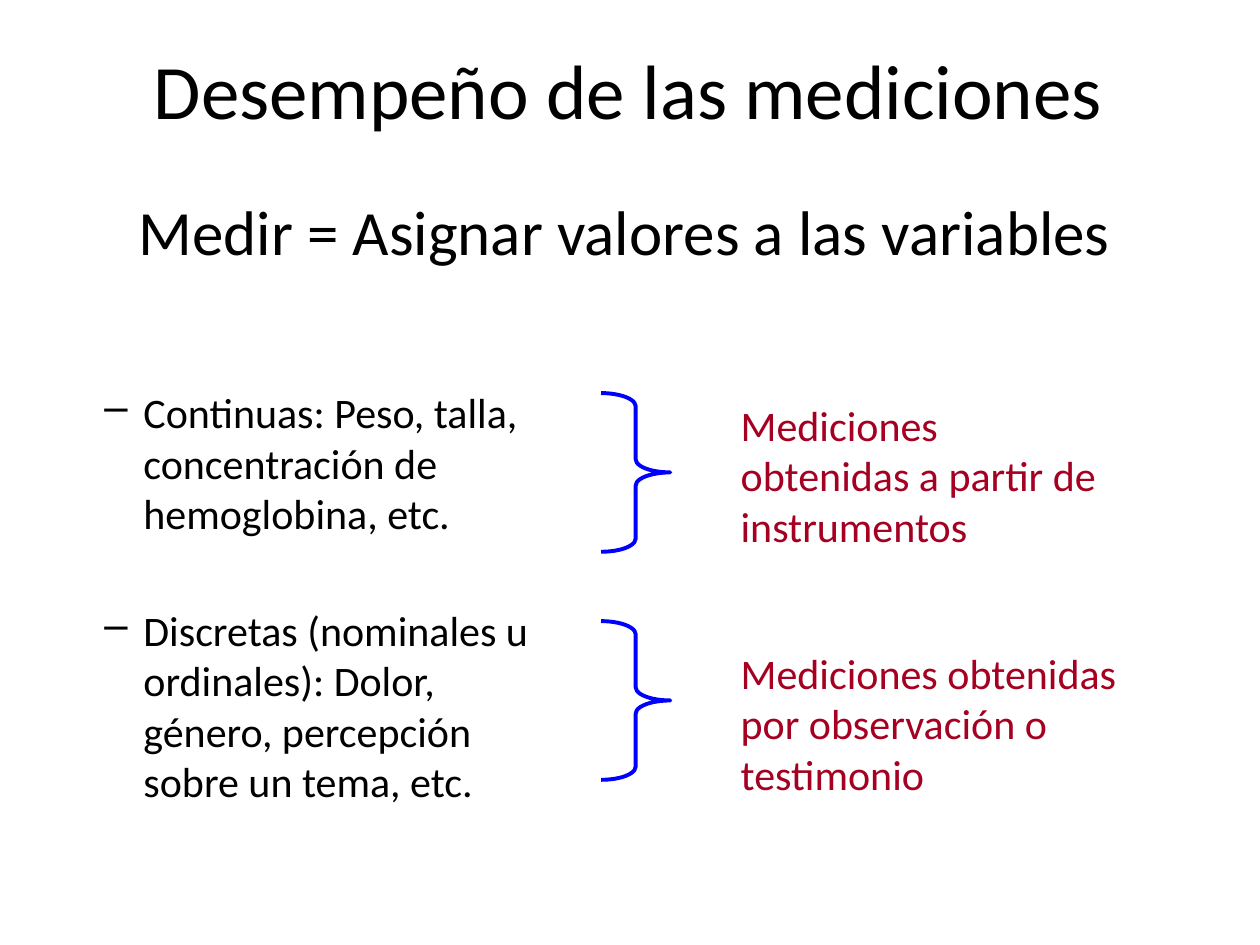
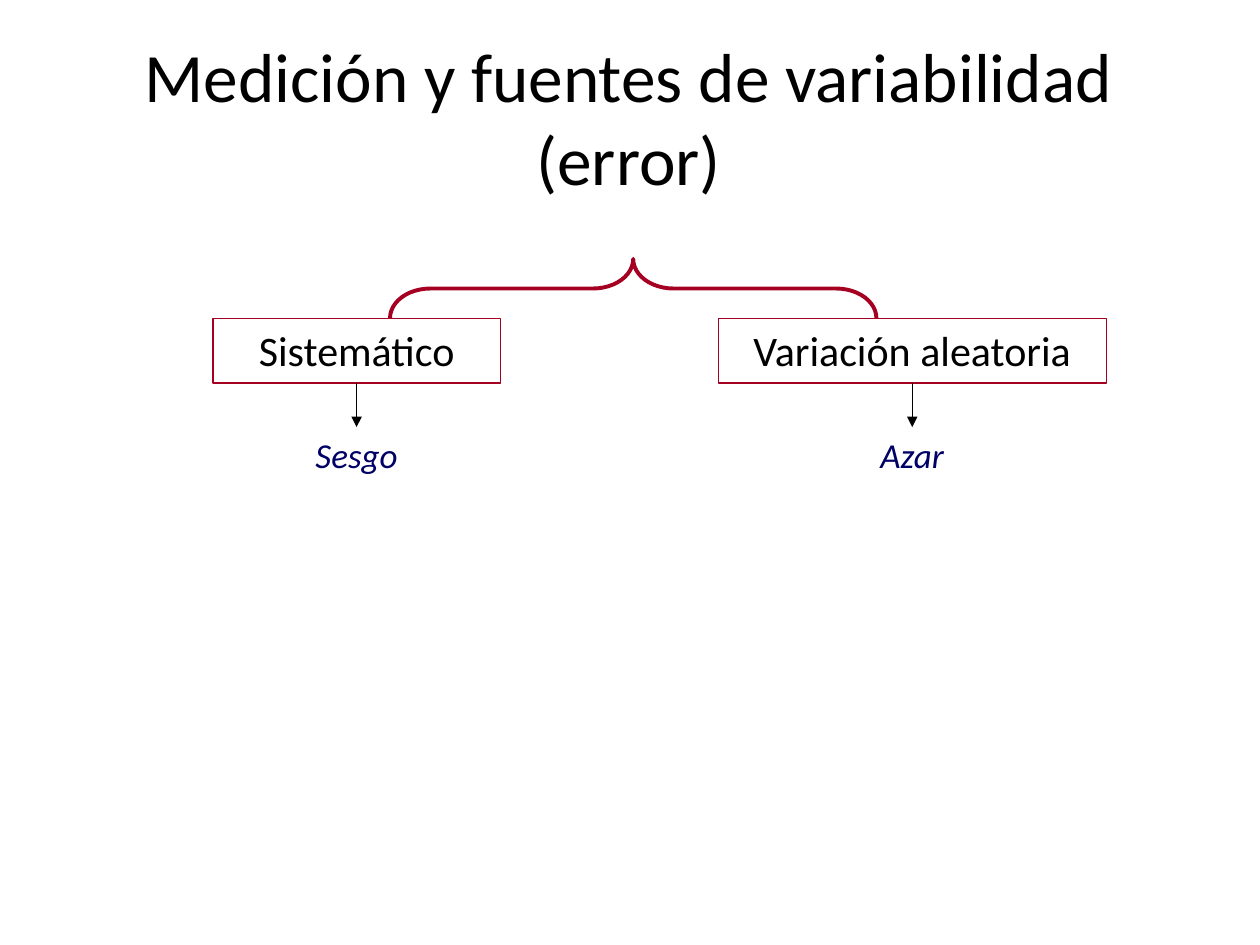
from dataclasses import dataclass

from lxml.etree import SubElement
from pptx import Presentation
from pptx.dml.color import RGBColor
from pptx.enum.shapes import MSO_CONNECTOR, MSO_SHAPE
from pptx.enum.text import MSO_ANCHOR, PP_ALIGN
from pptx.oxml.ns import qn
from pptx.shapes.autoshape import Shape
from pptx.slide import Slide
from pptx.text.text import TextFrame, _Paragraph
from pptx.util import Emu, Pt

# Shared look
PX = 9144  # 100 px to the inch
FONT = "Calibri"
BLACK = RGBColor(0x00, 0x00, 0x00)
WHITE = RGBColor(0xFF, 0xFF, 0xFF)
CRIMSON = RGBColor(0xA5, 0x00, 0x21)
BLUE = RGBColor(0x00, 0x00, 0xFF)
NAVY = RGBColor(0x00, 0x00, 0x66)


@dataclass(frozen=True)
class Box:
    left: int
    top: int
    width: int
    height: int

    def emu(self) -> tuple[Emu, ...]:
        return tuple(px(n) for n in (self.left, self.top, self.width, self.height))


@dataclass(frozen=True)
class Measurement:
    """A kind of variable, its brace and how it is measured."""
    examples: str
    brace_top: int
    method: str
    method_box: Box


@dataclass(frozen=True)
class ErrorSource:
    """A source of variability above the name of its effect."""
    name: str
    center: int
    width: int
    effect: str
    effect_width: int


MEASUREMENTS = (
    Measurement("Continuas: Peso, talla, concentración de hemoglobina, etc.", 312,
                "Mediciones obtenidas a partir de instrumentos",
                Box(578, 312, 307, 131)),
    Measurement("Discretas (nominales u ordinales): Dolor, género, percepción "
                "sobre un tema, etc.", 493,
                "Mediciones obtenidas por observación o testimonio",
                Box(578, 509, 362, 131)),
)
ERROR_SOURCES = (
    ErrorSource("Sistemático", 283, 228, "Sesgo", 118),
    ErrorSource("Variación aleatoria", 724, 308, "Azar", 102),
)


def px(length: int) -> Emu:
    return Emu(length * PX)


def write(paragraph: _Paragraph, text: str, *, size: float = 24,
          color: RGBColor = BLACK, italic: bool = False,
          align: PP_ALIGN = PP_ALIGN.LEFT) -> None:
    paragraph.alignment = align
    run = paragraph.add_run()
    run.text = text
    run.font.name = FONT
    run.font.size = Pt(size)
    run.font.color.rgb = color
    run.font.italic = italic


def add_text(slide: Slide, box: Box, text: str = "", *, wrap: bool = True,
             anchor: MSO_ANCHOR = MSO_ANCHOR.TOP, **text_format) -> Shape:
    label = slide.shapes.add_textbox(*box.emu())
    frame = label.text_frame
    frame.word_wrap = wrap
    frame.vertical_anchor = anchor
    if text:
        write(frame.paragraphs[0], text, **text_format)
    return label


def add_title(slide: Slide, text: str, *, top: int, size: float) -> None:
    add_text(slide, Box(49, top, 900, 125), text, size=size,
             anchor=MSO_ANCHOR.MIDDLE, align=PP_ALIGN.CENTER)


def add_outline(slide: Slide, kind: MSO_SHAPE, box: Box, color: RGBColor,
                width: float) -> Shape:
    outline = slide.shapes.add_shape(kind, *box.emu())
    outline.shadow.inherit = False
    outline.fill.background()
    outline.line.color.rgb = color
    outline.line.width = Pt(width)
    return outline


def add_brace(slide: Slide, kind: MSO_SHAPE, box: Box, color: RGBColor,
              curve: float, rotation: int = 0) -> None:
    brace = add_outline(slide, kind, box, color, 2.25)
    brace.adjustments[0] = curve
    brace.rotation = rotation


def add_dash_item(frame: TextFrame, text: str, first: bool) -> None:
    item = frame.paragraphs[0] if first else frame.add_paragraph()
    properties = item._p.get_or_add_pPr()
    properties.set("marL", str(px(81)))
    properties.set("indent", str(px(-31)))
    if not first:
        item.space_before = Pt(38)
    SubElement(properties, qn("a:buChar")).set("char", "–")
    write(item, text)


def add_arrow(slide: Slide, source: Shape, target: Shape) -> None:
    """Join the bottom of the source to the top of the target."""
    arrow = slide.shapes.add_connector(MSO_CONNECTOR.STRAIGHT, 0, 0, 0, 0)
    arrow.begin_connect(source, 2)
    arrow.end_connect(target, 0)
    arrow.line.color.rgb = BLACK
    arrow.line.width = Pt(0.75)
    SubElement(arrow.line._get_or_add_ln(), qn("a:tailEnd")).set("type", "triangle")
    SubElement(arrow._element.spPr, qn("a:effectLst"))


def build_measurements(slide: Slide) -> None:
    add_title(slide, "Desempeño de las mediciones", top=8, size=44)
    add_text(slide, Box(100, 148, 799, 71), "Medir = Asignar valores a las variables",
             size=36, wrap=False)
    examples = add_text(slide, Box(23, 302, 422, 323)).text_frame
    for index, measurement in enumerate(MEASUREMENTS):
        add_dash_item(examples, measurement.examples, first=index == 0)
        add_brace(slide, MSO_SHAPE.RIGHT_BRACE,
                  Box(477, measurement.brace_top, 55, 126), BLUE, 0.19)
        add_text(slide, measurement.method_box, measurement.method, color=CRIMSON)


def build_error_sources(slide: Slide) -> None:
    add_title(slide, "Medición y fuentes de variabilidad (error)", top=30, size=39.6)
    for source in ERROR_SOURCES:
        name_box = Box(source.center - source.width // 2, 253, source.width, 51)
        name = add_outline(slide, MSO_SHAPE.RECTANGLE, name_box, CRIMSON, 0.75)
        name.text_frame.word_wrap = True
        name.text_frame.vertical_anchor = MSO_ANCHOR.TOP
        write(name.text_frame.paragraphs[0], source.name, align=PP_ALIGN.CENTER)
        effect_box = Box(source.center - source.effect_width // 2, 339,
                         source.effect_width, 43)
        effect = add_text(slide, effect_box, source.effect, size=20, color=NAVY,
                          italic=True, align=PP_ALIGN.CENTER)
        add_arrow(slide, name, effect)
    add_brace(slide, MSO_SHAPE.LEFT_BRACE, Box(479, 36, 47, 386), CRIMSON, 0.68,
              rotation=90)


def main() -> None:
    deck = Presentation()
    deck.slide_width, deck.slide_height = px(1000), px(750)
    for build in (build_measurements, build_error_sources):
        slide = deck.slides.add_slide(deck.slide_layouts[6])
        slide.background.fill.solid()
        slide.background.fill.fore_color.rgb = WHITE
        build(slide)
    deck.save("out.pptx")


if __name__ == "__main__":
    main()
